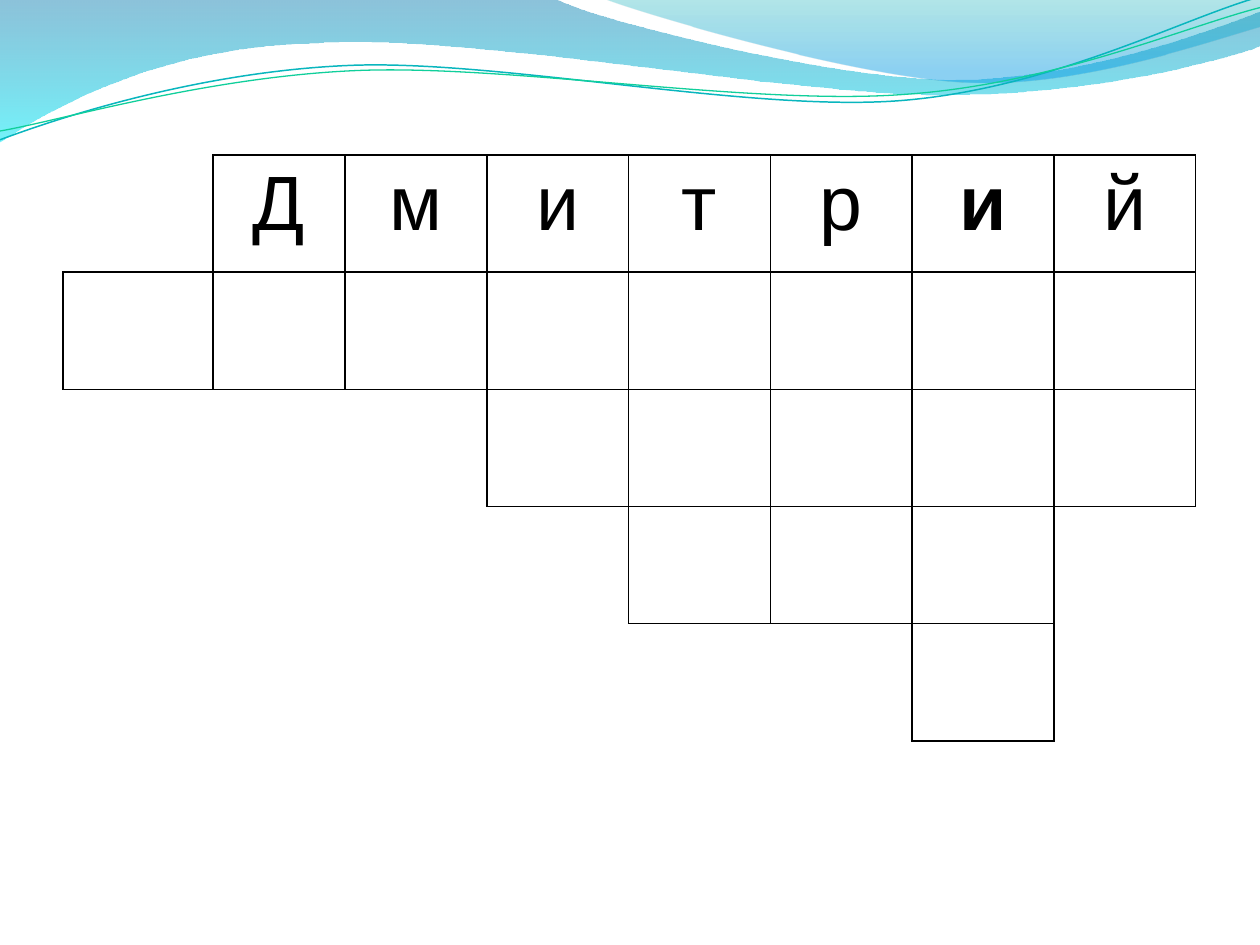
import dataclasses
import math
import typing

import lxml.etree
import pptx
import pptx.dml.color
import pptx.enum.text
import pptx.oxml.ns
import pptx.util

Inches = pptx.util.Inches
RGBColor = pptx.dml.color.RGBColor
qn = pptx.oxml.ns.qn
Point = tuple[float, float]

BLACK = RGBColor(0x00, 0x00, 0x00)
STEEL_BLUE = RGBColor(0x00, 0x79, 0xAD)
CYAN = RGBColor(0x00, 0xE9, 0xF7)
TEAL = RGBColor(0x00, 0xAB, 0xB4)
AZURE = RGBColor(0x00, 0x99, 0xE4)
TURQUOISE = RGBColor(0x09, 0xB6, 0xBE)
GREEN = RGBColor(0x10, 0xCF, 0x9B)

TABLE_WIDTH = 8.99
FIRST_WIDTHS = [1.19, 1.05]
COLUMN_WIDTHS = FIRST_WIDTHS + [(TABLE_WIDTH - sum(FIRST_WIDTHS)) / 6] * 6
ROW_HEIGHT = 0.93
ANSWER = "Дмитрий"
BOLD_LETTER = 5
ROW_SPANS = [(1, 7), (0, 7), (3, 7), (4, 6), (6, 6)]
SIDES = {"lnL": (0, -1), "lnR": (0, 1), "lnT": (-1, 0), "lnB": (1, 0)}


class Stop(typing.NamedTuple):
    position: int
    color: RGBColor
    opacity: int


class Frame(typing.NamedTuple):
    left: float
    top: float
    width: float
    height: float


@dataclasses.dataclass
class Wave:
    frame: Frame
    start: Point
    segments: list[tuple[Point, ...]]
    stops: tuple[Stop, ...] = ()
    line_color: RGBColor | None = None
    line_width: float = 0
    rotation: float = 0


WAVES = [
    Wave(
        Frame(-0.01, -0.01, 10.02, 1.14),
        (0, 0),
        [
            ((4.4, -0.01),),
            ((4.76, 0.17), (6.64, 0.63), (7.58, 0.63)),
            ((8.53, 0.63), (9.58, 0.26), (10, 0.09)),
            ((10.01, 0.36),),
            ((9.83, 0.44), (8.7, 0.76), (7.46, 0.75)),
            ((6.22, 0.75), (3.82, 0.28), (2.57, 0.34)),
            ((1.29, 0.36), (0.46, 0.83), (-0.01, 1.13)),
            ((0, 0),),
        ],
        stops=(Stop(0, STEEL_BLUE, 45), Stop(100, CYAN, 55)),
    ),
    Wave(
        Frame(4.79, -0.01, 5.21, 0.7),
        (4.79, -0.01),
        [
            ((5.09, 0.11), (6.82, 0.62), (7.69, 0.65)),
            ((8.56, 0.69), (9.61, 0.32), (10, 0.21)),
            ((10, 0),),
            ((4.79, -0.01),),
        ],
        stops=(Stop(0, TEAL, 30), Stop(80, AZURE, 45), Stop(100, AZURE, 45)),
    ),
    Wave(
        Frame(-0.02, 0.22, 10.02, 0.71),
        (0, 1.11),
        [
            ((0.48, 0.93), (1.58, 0.57), (2.77, 0.52)),
            ((3.95, 0.47), (5.93, 0.89), (7.13, 0.8)),
            ((8.33, 0.71), (9.38, 0.15), (9.98, -0.02)),
        ],
        line_color=TURQUOISE,
        line_width=0.85,
        rotation=357.3,
    ),
    Wave(
        Frame(-0.02, 0.3, 10.03, 0.58),
        (0, 1.04),
        [
            ((0.47, 0.96), (1.64, 0.61), (2.83, 0.56)),
            ((4.03, 0.51), (5.97, 0.84), (7.17, 0.75)),
            ((8.36, 0.67), (9.41, 0.21), (10, 0.06)),
        ],
        line_color=GREEN,
        line_width=0.75,
        rotation=357.3,
    ),
]


def add_child(parent: typing.Any, tag: str, **attributes: str) -> typing.Any:
    return lxml.etree.SubElement(parent, qn(tag), attributes)


def local_point(wave: Wave, point: Point) -> Point:
    frame = wave.frame
    angle = math.radians(-wave.rotation)
    across = point[0] - frame.left - frame.width / 2
    down = point[1] - frame.top - frame.height / 2
    x = across * math.cos(angle) - down * math.sin(angle) + frame.width / 2
    y = across * math.sin(angle) + down * math.cos(angle) + frame.height / 2
    return Inches(x), Inches(y)


def trace_curves(shape: typing.Any, wave: Wave) -> None:
    outline = shape._element.find(f".//{qn('a:path')}")
    for child in list(outline):
        outline.remove(child)
    outline.set("w", str(Inches(wave.frame.width)))
    outline.set("h", str(Inches(wave.frame.height)))
    moves = [("a:moveTo", (wave.start,))]
    moves += [("a:cubicBezTo" if len(s) == 3 else "a:lnTo", s) for s in wave.segments]
    for tag, points in moves:
        move = add_child(outline, tag)
        for point in points:
            x, y = local_point(wave, point)
            add_child(move, "a:pt", x=str(x), y=str(y))
    if wave.stops:
        add_child(outline, "a:close")


def fill_gradient(shape: typing.Any, stops: tuple[Stop, ...]) -> None:
    shape.fill.gradient()
    gradient = shape._element.spPr.find(qn("a:gradFill"))
    for child in list(gradient):
        gradient.remove(child)
    stop_list = add_child(gradient, "a:gsLst")
    for stop in stops:
        entry = add_child(stop_list, "a:gs", pos=str(stop.position * 1000))
        color = add_child(entry, "a:srgbClr", val=str(stop.color))
        add_child(color, "a:alpha", val=str(stop.opacity * 1000))
    add_child(gradient, "a:lin", ang="5400000", scaled="0")


def draw_wave(page: typing.Any, wave: Wave) -> None:
    anchors = [wave.start] + [segment[-1] for segment in wave.segments]
    points = [(Inches(x), Inches(y)) for x, y in anchors]
    builder = page.shapes.build_freeform(*points[0])
    builder.add_line_segments(points[1:], close=False)
    shape = builder.convert_to_shape()
    shape.left, shape.top, shape.width, shape.height = map(Inches, wave.frame)
    shape.rotation = wave.rotation
    trace_curves(shape, wave)
    shape.shadow.inherit = False
    if wave.stops:
        fill_gradient(shape, wave.stops)
        shape.line.fill.background()
    else:
        shape.fill.background()
        shape.line.color.rgb = wave.line_color
        shape.line.width = pptx.util.Pt(wave.line_width)


def in_crossword(row: int, column: int) -> bool:
    if not 0 <= row < len(ROW_SPANS):
        return False
    first, last = ROW_SPANS[row]
    return first <= column <= last


def draw_borders(cell: typing.Any, row: int, column: int) -> None:
    properties = cell._tc.get_or_add_tcPr()
    for side, (down, right) in SIDES.items():
        border = add_child(properties, f"a:{side}", w=str(pptx.util.Pt(1)))
        if in_crossword(row, column) or in_crossword(row + down, column + right):
            fill = add_child(border, "a:solidFill")
            add_child(fill, "a:srgbClr", val=str(BLACK))
        else:
            add_child(border, "a:noFill")


def write_letter(cell: typing.Any, letter: str, bold: bool) -> None:
    cell.text_frame.text = letter
    para = cell.text_frame.paragraphs[0]
    para.alignment = pptx.enum.text.PP_ALIGN.CENTER
    font = para.runs[0].font
    font.name = "Arial"
    font.size = pptx.util.Pt(44)
    font.bold = bold
    font.color.rgb = BLACK


def draw_crossword(page: typing.Any) -> None:
    rows, columns = len(ROW_SPANS), len(COLUMN_WIDTHS)
    size = Inches(TABLE_WIDTH), Inches(ROW_HEIGHT * rows)
    table = page.shapes.add_table(rows, columns, Inches(0.5), Inches(1.23), *size).table
    table.first_row = table.horz_banding = False
    for column, width in zip(table.columns, COLUMN_WIDTHS):
        column.width = Inches(width)
    for row in range(rows):
        for column in range(columns):
            cell = table.cell(row, column)
            draw_borders(cell, row, column)
            cell.fill.background()
    for index, letter in enumerate(ANSWER):
        write_letter(table.cell(0, index + 1), letter, index == BOLD_LETTER)


deck = pptx.Presentation()
deck.slide_width, deck.slide_height = Inches(10), Inches(7.5)
page = deck.slides.add_slide(deck.slide_layouts[6])
for wave in WAVES:
    draw_wave(page, wave)
draw_crossword(page)
deck.save("out.pptx")
